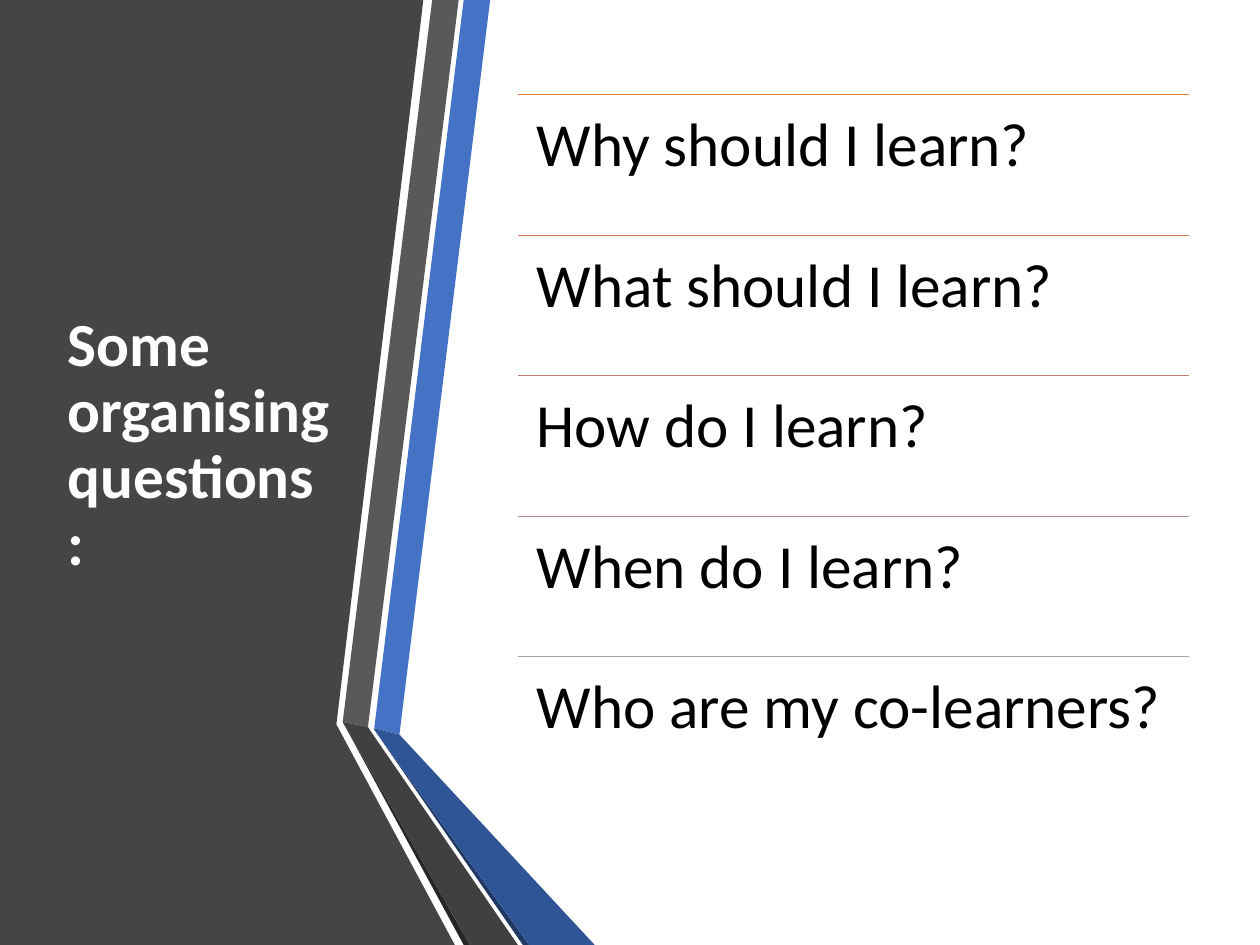
from pptx import Presentation
from pptx import util as u
from pptx.dml.color import RGBColor
from pptx.enum import shapes, text
from pptx.oxml.ns import qn
from lxml import etree

PX = u.Inches(1) // 100  # one px is a hundredth of an inch

WHITE = RGBColor(0xFF, 0xFF, 0xFF)
BLACK = RGBColor(0x00, 0x00, 0x00)
PANEL = RGBColor(0x45, 0x45, 0x45)
BLUE = RGBColor(0x44, 0x72, 0xC4)
BLUE_DARK = RGBColor(0x2F, 0x55, 0x97)
BLUE_EDGE = RGBColor(0x20, 0x38, 0x64)
GREY = RGBColor(0x59, 0x59, 0x59)
GREY_DARK = RGBColor(0x40, 0x40, 0x40)
GREY_EDGE = RGBColor(0x26, 0x26, 0x26)
RULE_1 = RGBColor(0xED, 0x7D, 0x31)
RULE_2 = RGBColor(0xD8, 0x7A, 0x51)
RULE_3 = RGBColor(0xC4, 0x81, 0x70)
RULE_4 = RGBColor(0xB4, 0x90, 0x8B)
RULE_5 = RGBColor(0xA5, 0xA5, 0xA5)


class SlideBuilder:
    font_name = "Calibri"
    font_size = u.Pt(35)
    line_spacing = 0.9

    def __init__(self, slide):
        self.slide = slide

    def polygon(self, points, color):
        builder = self.slide.shapes.build_freeform(*points[0], scale=PX)
        builder.add_line_segments(points[1:], close=True)
        shape = builder.convert_to_shape()
        shape.shadow.inherit = False
        shape.fill.solid()
        shape.fill.fore_color.rgb = color
        shape.line.fill.background()

    def rule(self, left, top, width, color):
        connector = self.slide.shapes.add_connector(
            shapes.MSO_CONNECTOR.STRAIGHT,
            left * PX, top * PX, (left + width) * PX, top * PX)
        connector.line.color.rgb = color
        connector.line.width = u.Pt(1)
        etree.SubElement(connector._element.spPr, qn("a:effectLst"))

    def label(self, wording, left, top, width, height, color, inset,
              bold=False, anchor=text.MSO_ANCHOR.TOP):
        box = self.slide.shapes.add_textbox(
            left * PX, top * PX, width * PX, height * PX)
        frame = box.text_frame
        frame.text = wording
        frame.word_wrap = True
        frame.vertical_anchor = anchor
        frame.margin_left = frame.margin_right = inset * PX
        frame.margin_top = frame.margin_bottom = min(inset, 15) * PX
        paragraph = frame.paragraphs[0]
        paragraph.line_spacing = self.line_spacing
        font = paragraph.runs[0].font
        font.name = self.font_name
        font.size = self.font_size
        font.bold = bold
        font.color.rgb = color


def main():
    presentation = Presentation()
    presentation.slide_width = 1000 * PX
    presentation.slide_height = 750 * PX
    builder = SlideBuilder(
        presentation.slides.add_slide(presentation.slide_layouts[6]))

    # Dark panel on the left
    builder.polygon([(264, 0), (336, 0), (267, 575), (361, 750),
                     (0, 750), (0, 0)], PANEL)

    # Folded ribbons: upper bands, thin edges, lower bands
    ribbons = [
        ([(297, 578), (317, 583), (389, 0), (368, 0)], BLUE),
        ([(364, 0), (343, 0), (272, 573), (292, 577)], GREY),
        ([(272, 573), (368, 750), (373, 750)], GREY_EDGE),
        ([(297, 579), (415, 750), (420, 750)], BLUE_EDGE),
        ([(297, 579), (420, 750), (472, 750), (317, 583), (297, 578)],
         BLUE_DARK),
        ([(411, 750), (296, 583), (292, 577), (272, 573), (373, 750)],
         GREY_DARK),
    ]
    for points, color in ribbons:
        builder.polygon(points, color)

    # Title
    builder.label("Some organising questions:", 44, 75, 228, 558, WHITE,
                  inset=10, bold=True, anchor=text.MSO_ANCHOR.MIDDLE)

    # Questions, each under its own rule, in equal rows
    questions = [
        ("Why should I learn?", RULE_1),
        ("What should I learn?", RULE_2),
        ("How do I learn?", RULE_3),
        ("When do I learn?", RULE_4),
        ("Who are my co-learners?", RULE_5),
    ]
    left, first_top, width, total_height = 411, 75, 533, 558
    for index, (question, color) in enumerate(questions):
        top = first_top + round(index * total_height / len(questions))
        builder.rule(left, top, width, color)
        builder.label(question, left, top, width, 112, BLACK, inset=15)

    presentation.save("out.pptx")


if __name__ == "__main__":
    main()
